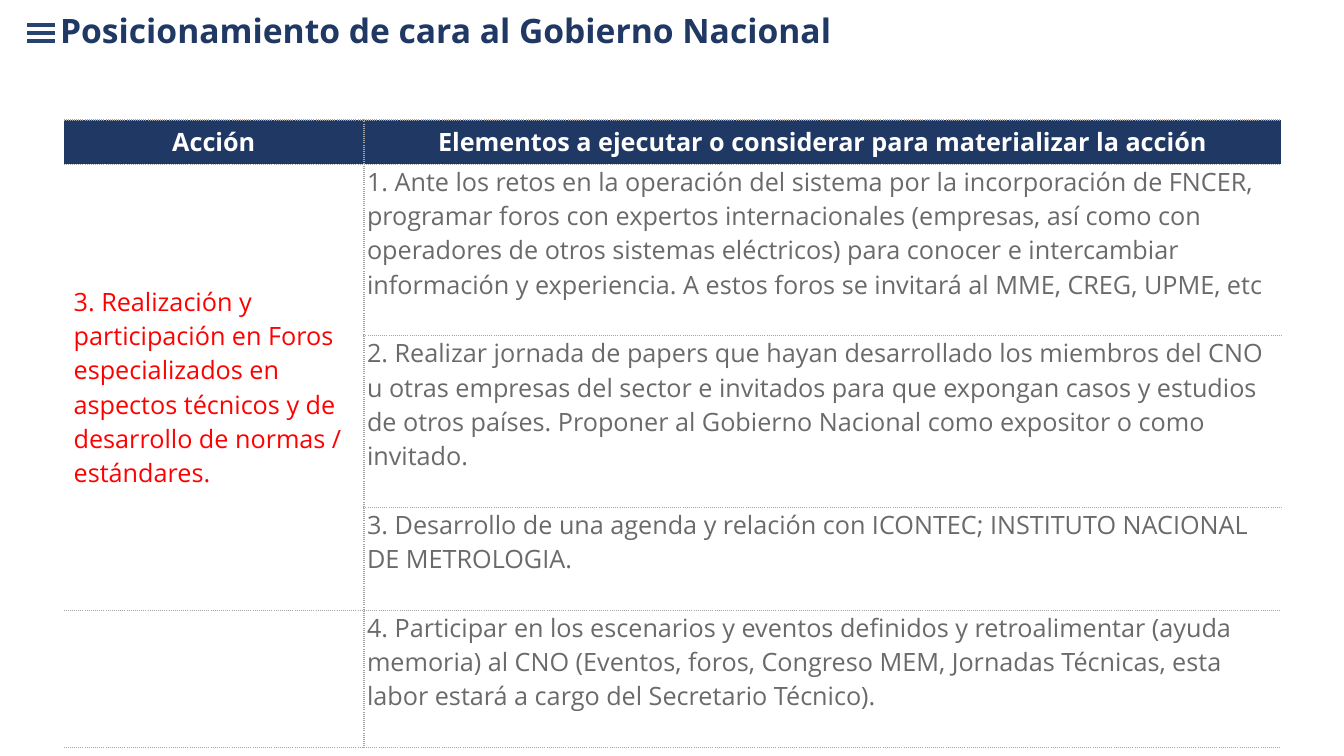
"""Build the slide on positioning towards the national government."""
from lxml import etree
from pptx import Presentation
from pptx.dml.color import RGBColor
from pptx.enum.shapes import MSO_CONNECTOR as CONN
from pptx.enum.text import MSO_ANCHOR as ANCHOR, PP_ALIGN as ALIGN
from pptx.oxml import parse_xml
from pptx.oxml.ns import nsdecls, qn
from pptx.util import Pt

FONT = "Open Sans"
COLORS = {"navy": "203864", "icon": "274470", "white": "FFFFFF",
          "red": "FF0000", "gray": "6A6A6A", "border": "A6A6A6"}
NO_STYLE = "{2D5ABB26-0587-4C30-8999-92F81FD0307C}"
TITLE = "Posicionamiento de cara al Gobierno Nacional"
HEADERS = ["Acción", "Elementos a ejecutar o considerar para materializar la acción"]
ACTION = ("3. Realización y participación en Foros especializados en aspectos "
          "técnicos y de desarrollo de normas / estándares.")
ELEMENTS = [
    "1. Ante los retos en la operación del sistema por la incorporación de FNCER, "
    "programar foros con expertos internacionales (empresas, así como con operadores "
    "de otros sistemas eléctricos) para conocer e intercambiar información y "
    "experiencia. A estos foros se invitará al MME, CREG, UPME, etc",
    "2. Realizar jornada de papers que hayan desarrollado los miembros del CNO u otras "
    "empresas del sector e invitados para que expongan casos y estudios de otros "
    "países. Proponer al Gobierno Nacional como expositor o como invitado.",
    "3. Desarrollo de una agenda y relación con ICONTEC; INSTITUTO NACIONAL DE METROLOGIA.",
    "4. Participar en los escenarios y eventos definidos y retroalimentar (ayuda "
    "memoria) al CNO (Eventos, foros, Congreso MEM, Jornadas Técnicas, esta labor "
    "estará a cargo del Secretario Técnico).",
]
COL_WIDTHS = [214.6, 655.2]
ROW_HEIGHTS = [31.7, 122.5, 122.5, 73.5, 98]
HEADER = {"size": 18, "bold": True, "color": "white", "align": ALIGN.CENTER}
BODY = {"size": 18, "bold": False, "color": "gray", "align": ALIGN.LEFT}
INSETS = {"margin_left": Pt(2.2), "margin_right": Pt(2.2), "margin_top": 0, "margin_bottom": 0}


def set_attrs(obj, values):
    """Set each named attribute on an object."""
    for name, value in values.items():
        setattr(obj, name, value)


def write(tf, text, fmt):
    """Write one formatted paragraph."""
    p = tf.paragraphs[0]
    p.alignment = fmt["align"]
    r = p.add_run()
    r.text = text
    set_attrs(r.font, {"name": FONT, "size": Pt(fmt["size"]), "bold": fmt["bold"]})
    r.font.color.rgb = RGBColor.from_string(COLORS[fmt["color"]])
    return p


def set_borders(cell, sides):
    """Give the listed sides of a cell a dotted border and the others none."""
    tc_pr = cell._tc.get_or_add_tcPr()
    for i, side in enumerate("LRTB"):
        line = (f'<a:solidFill><a:srgbClr val="{COLORS["border"]}"/></a:solidFill>'
                '<a:prstDash val="sysDot"/>') if side in sides else "<a:noFill/>"
        tc_pr.insert(i, parse_xml(
            f'<a:ln{side} {nsdecls("a")} w="{Pt(1)}">{line}</a:ln{side}>'))


def add_menu_icon(s):
    """Draw the three bars left of the title."""
    for i in range(3):
        y = Pt(18 + 5.76 * i)
        bar = s.shapes.add_connector(CONN.STRAIGHT, Pt(19.4), y, Pt(39.6), y)
        bar.line.color.rgb = RGBColor.from_string(COLORS["icon"])
        bar.line.width = Pt(3)
        etree.SubElement(bar._element.spPr, qn("a:effectLst"))


def add_title(s):
    """Add the slide title."""
    tf = s.shapes.add_textbox(Pt(29.5), Pt(-8.6), Pt(879), Pt(64)).text_frame
    set_attrs(tf, {"word_wrap": True, "vertical_anchor": ANCHOR.MIDDLE,
                   "margin_left": Pt(13.4)})
    p = write(tf, TITLE, {**HEADER, "size": 24, "color": "navy", "align": ALIGN.LEFT})
    p.line_spacing = 0.9


def add_action_table(s):
    """Add the table of the action and its elements."""
    frame = s.shapes.add_table(len(ROW_HEIGHTS), len(COL_WIDTHS), Pt(45.4), Pt(85.7),
                               Pt(sum(COL_WIDTHS)), Pt(sum(ROW_HEIGHTS)))
    table = frame.table
    set_attrs(table, {"first_row": False, "horz_banding": False})
    table._tbl.tblPr.find(qn("a:tableStyleId")).text = NO_STYLE
    for col, width in zip(table.columns, COL_WIDTHS):
        col.width = Pt(width)
    for row, height in zip(table.rows, ROW_HEIGHTS):
        row.height = Pt(height)
    for cell, text in zip(table.rows[0].cells, HEADERS):
        cell.fill.solid()
        cell.fill.fore_color.rgb = RGBColor.from_string(COLORS["navy"])
        write(cell.text_frame, text, HEADER)
    for i, text in enumerate(ELEMENTS, 1):
        cell = table.cell(i, 1)
        set_attrs(cell, {**INSETS, "vertical_anchor": ANCHOR.TOP})
        write(cell.text_frame, text, BODY)
    action = table.cell(1, 0)
    action.merge(table.cell(3, 0))
    action.vertical_anchor = ANCHOR.MIDDLE
    write(action.text_frame, ACTION, {**BODY, "color": "red"})
    for row, sides in enumerate(["RTB", "RTB", "R", "RB", "RTB"]):
        set_borders(table.cell(row, 0), sides)
        set_borders(table.cell(row, 1), "LTB")


def main():
    """Build and save the slide."""
    prs = Presentation()
    set_attrs(prs, {"slide_width": Pt(960), "slide_height": Pt(540)})
    s = prs.slides.add_slide(prs.slide_layouts[6])
    add_menu_icon(s)
    add_action_table(s)
    add_title(s)
    prs.save("out.pptx")


if __name__ == "__main__":
    main()
